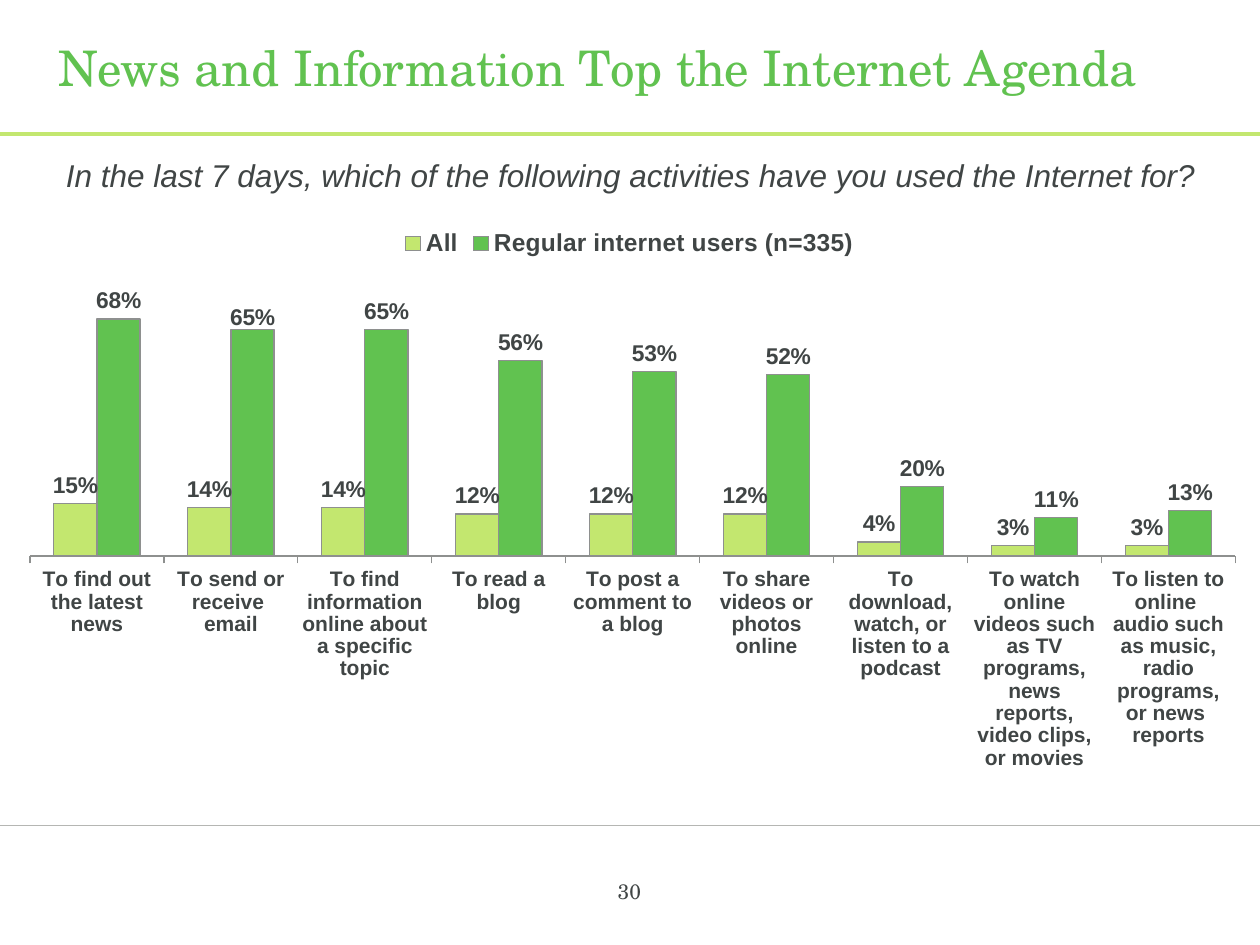
from dataclasses import dataclass

from lxml import etree
from pptx import Presentation
from pptx.chart.data import CategoryChartData
from pptx.dml.color import RGBColor
from pptx.enum import chart as ch
from pptx.enum import shapes, text
from pptx.oxml import ns
from pptx.util import Inches, Pt

SERIF, SANS = "TeX Gyre Schola", "Arial"
GREEN, LIME, INK, GREY, PALE = "61C250", "C3E76F", "404545", "8E908F", "B5B6B3"


@dataclass
class Rule:
    top: float
    color: str
    weight: float


@dataclass
class Label:
    wording: str
    frame: tuple[float, float, float, float]
    size: float
    font: str
    color: str
    align: text.PP_ALIGN = text.PP_ALIGN.CENTER
    anchor: text.MSO_ANCHOR = text.MSO_ANCHOR.TOP
    italic: bool = False


@dataclass
class Group:
    name: str
    percents: list[int]
    color: str


RULES = [Rule(6.55, PALE, 0.25), Rule(1.06, LIME, 2.25)]
LABELS = [
    Label("News and Information Top the Internet Agenda", (0.37, 0.21, 9.36, 0.64),
          28, SERIF, GREEN, text.PP_ALIGN.LEFT, text.MSO_ANCHOR.MIDDLE),
    Label("30", (3.83, 6.92, 2.33, 0.52), 12, SERIF, INK),
    Label("In the last 7 days, which of the following activities have you used the Internet for?",
          (0.38, 1.19, 9.25, 0.4), 18, SANS, INK, italic=True),
]
ACTIVITIES = [
    "To find out the latest news",
    "To send or receive \nemail",
    "To find information online about a specific topic",
    "To read a blog",
    "To post a comment to a blog",
    "To share videos or photos online",
    "To download, watch, or listen to a podcast",
    "To watch online videos such as TV programs, news reports, video clips, or movies",
    "To listen to online \naudio such as music, radio programs, or news \nreports",
]
GROUPS = [
    Group("All", [15, 14, 14, 12, 12, 12, 4, 3, 3], LIME),
    Group("Regular internet users (n=335)", [68, 65, 65, 56, 53, 52, 20, 11, 13], GREEN),
]


def rgb(color: str) -> RGBColor:
    return RGBColor.from_string(color)


def style_font(font, size: float, name: str, color: str, bold=False, italic=False) -> None:
    font.size, font.name = Pt(size), name
    font.bold, font.italic = bold, italic
    font.color.rgb = rgb(color)


def add_layout(parent, index: int, **values) -> None:
    """Insert a manual chart layout into parent, replacing any existing one."""
    for old in parent.findall(ns.qn("c:layout")):
        parent.remove(old)
    layout = etree.Element(ns.qn("c:layout"))
    manual = etree.SubElement(layout, ns.qn("c:manualLayout"))
    for tag, value in values.items():
        etree.SubElement(manual, ns.qn(f"c:{tag}")).set("val", str(value))
    parent.insert(index, layout)


def draw_rule(page, rule: Rule) -> None:
    line = page.shapes.add_connector(shapes.MSO_CONNECTOR.STRAIGHT, Inches(0), Inches(rule.top),
                                     Inches(10), Inches(rule.top))
    line.line.color.rgb = rgb(rule.color)
    line.line.width = Pt(rule.weight)
    etree.SubElement(line._element.spPr, ns.qn("a:effectLst"))


def draw_label(page, label: Label) -> None:
    box = page.shapes.add_textbox(*map(Inches, label.frame))
    frame = box.text_frame
    frame.word_wrap = True
    frame.vertical_anchor = label.anchor
    frame.text = label.wording
    para = frame.paragraphs[0]
    para.alignment = label.align
    style_font(para.runs[0].font, label.size, label.font, label.color, italic=label.italic)


def draw_chart(page, groups: list[Group]) -> None:
    data = CategoryChartData(number_format="0%")
    data.categories = ACTIVITIES
    for group in groups:
        data.add_series(group.name, [percent / 100 for percent in group.percents])
    chart = page.shapes.add_chart(ch.XL_CHART_TYPE.COLUMN_CLUSTERED, Inches(0.19), Inches(1.71),
                                  Inches(9.62), Inches(4.76), data).chart
    style_font(chart.font, 14, SANS, INK, bold=True)
    chart.has_title = False
    chart.has_legend = True
    chart.legend.position = ch.XL_LEGEND_POSITION.TOP
    chart.legend.include_in_layout = False
    style_font(chart.legend.font, 14, SANS, INK, bold=True)

    # Axes
    values = chart.value_axis
    values.minimum_scale, values.maximum_scale = 0, 0.8
    values.has_major_gridlines = False
    values.visible = False
    categories = chart.category_axis
    categories.major_tick_mark = ch.XL_TICK_MARK.OUTSIDE
    categories.format.line.color.rgb = rgb(GREY)
    categories.format.line.width = Pt(0.75)
    style_font(categories.tick_labels.font, 12, SANS, INK, bold=True)

    # Columns and their labels
    plot = chart.plots[0]
    plot.gap_width, plot.overlap = 110, 0
    plot.vary_by_categories = False
    for series, group in zip(plot.series, groups):
        series.format.fill.solid()
        series.format.fill.fore_color.rgb = rgb(group.color)
        series.format.line.color.rgb = rgb(GREY)
        series.format.line.width = Pt(0.75)
        labels = series.data_labels
        labels.show_value = True
        labels.number_format, labels.number_format_is_linked = "0%", False
        labels.position = ch.XL_LABEL_POSITION.OUTSIDE_END
        style_font(labels.font, 13, SANS, INK, bold=True)

    # The e-mail label sits slightly closer to its column
    email = plot.series[1].points[1].data_label
    style_font(email.font, 13, SANS, INK, bold=True)
    email.position = ch.XL_LABEL_POSITION.OUTSIDE_END
    label_xml = plot.series[1].data_labels._element.find(ns.qn("c:dLbl"))
    add_layout(label_xml, 1, x=0, y=0.01)

    plot_area = chart._chartSpace.chart.plotArea
    add_layout(plot_area, 0, layoutTarget="inner", xMode="edge", yMode="edge",
               x=0.005, y=0.103, w=0.995, h=0.465)


def main() -> None:
    deck = Presentation()
    deck.slide_width, deck.slide_height = Inches(10), Inches(7.5)
    page = deck.slides.add_slide(deck.slide_layouts[6])
    for rule in RULES:
        draw_rule(page, rule)
    draw_chart(page, GROUPS)
    for label in LABELS:
        draw_label(page, label)
    deck.save("out.pptx")


if __name__ == "__main__":
    main()
